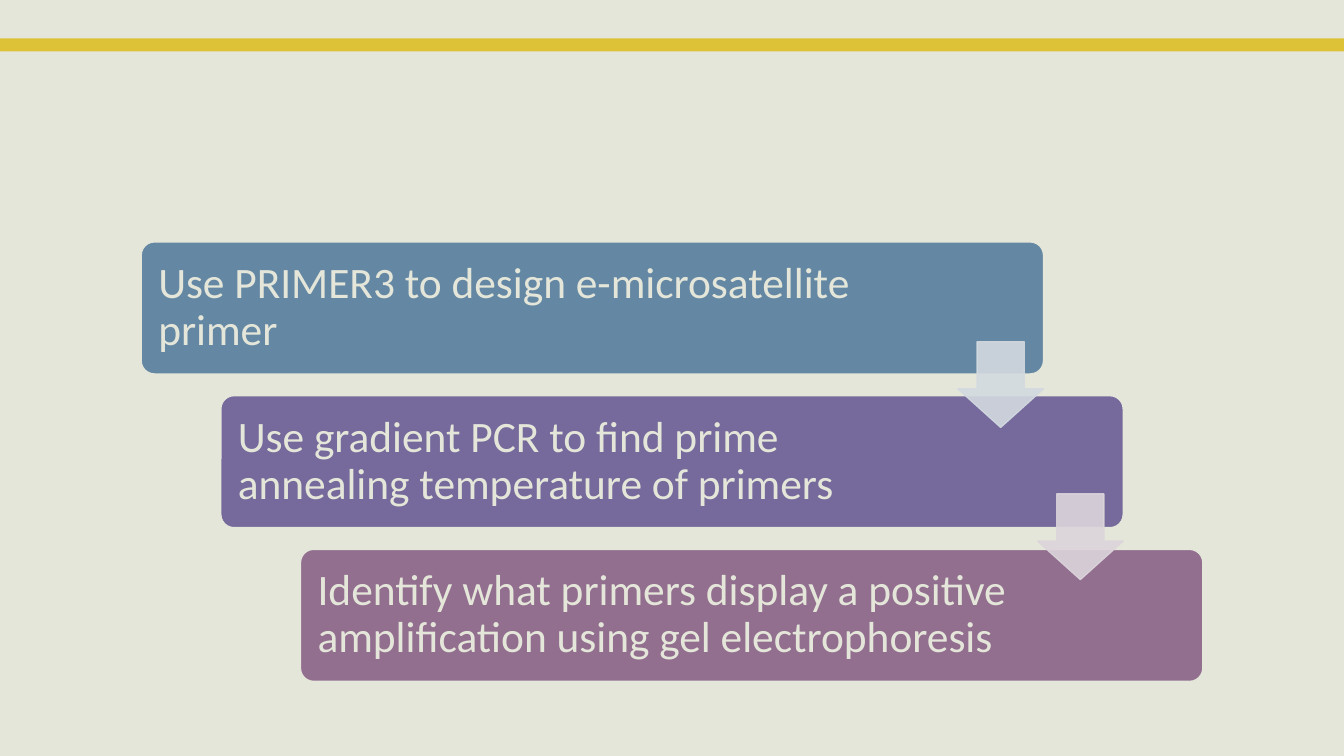
from lxml.etree import SubElement
from pptx import Presentation
from pptx.dml.color import RGBColor
from pptx.enum.shapes import MSO_SHAPE as Shape
from pptx.enum.text import MSO_ANCHOR as Anchor, PP_ALIGN as Align
from pptx.oxml.ns import qn
from pptx.util import Inches, Pt

CREAM = RGBColor(0xE5, 0xE6, 0xDA)
GOLD = RGBColor(0xDD, 0xC2, 0x37)
BLUE = RGBColor(0x64, 0x88, 0xA3)
PURPLE = RGBColor(0x76, 0x69, 0x9B)
MAUVE = RGBColor(0x92, 0x6E, 0x8F)
PALE_BLUE = RGBColor(0xD3, 0xDA, 0xE0)
PALE_MAUVE = RGBColor(0xDC, 0xD5, 0xDB)

STEPS = [
    ("Use PRIMER3 to design e-microsatellite primer", BLUE, 7.54),
    ("Use gradient PCR to find prime annealing temperature of primers", PURPLE, 7.24),
    ("Identify what primers display a positive amplification using gel electrophoresis", MAUVE, 7.24),
]
ARROWS = [PALE_BLUE, PALE_MAUVE]

WIDTH, HEIGHT = 13.33, 7.5
LEFT, TOP = 1.4, 2.4
STEP_X, STEP_Y = 0.79, 1.525
CARD_W, CARD_H = 8.95, 1.31
ARROW_LEFT, ARROW_TOP, ARROW_SIZE, ARROW_STEP_Y = 9.5, 3.39, 0.85, 1.51
INSET, PADDING = 0.04, 0.13
FONT = {"name": "Calibri", "size": Pt(31)}
PARAGRAPH = {"line_spacing": 0.9, "alignment": Align.LEFT}
FRAME = {"word_wrap": True, "vertical_anchor": Anchor.MIDDLE}
FRAME.update({f"margin_{side}": Inches(PADDING) for side in ("left", "top", "right", "bottom")})


def set_all(target, values):
    for name, value in values.items():
        setattr(target, name, value)


def add_shape(shapes, kind, box, fill, line=None, adjustments=(), alpha=None):
    sp = shapes.add_shape(kind, *map(Inches, box))
    sp.shadow.inherit = False
    for i, value in enumerate(adjustments):
        sp.adjustments[i] = value
    sp.fill.solid()
    sp.fill.fore_color.rgb = fill
    if line is None:
        sp.line.fill.background()
    else:
        sp.line.color.rgb = line
        sp.line.width = Pt(1)
    if alpha is not None:
        for color in sp._element.spPr.iter(qn("a:srgbClr")):
            SubElement(color, qn("a:alpha"), val=str(alpha * 1000))


def add_label(shapes, box, text):
    tf = shapes.add_textbox(*map(Inches, box)).text_frame
    set_all(tf, FRAME)
    p = tf.paragraphs[0]
    set_all(p, PARAGRAPH)
    r = p.add_run()
    r.text = text
    set_all(r.font, FONT)
    r.font.color.rgb = CREAM


def main():
    """Build the slide of primer steps as a descending staircase."""
    prs = Presentation()
    prs.slide_width, prs.slide_height = Inches(WIDTH), Inches(HEIGHT)
    s = prs.slides.add_slide(prs.slide_layouts[6])
    s.background.fill.solid()
    s.background.fill.fore_color.rgb = CREAM
    add_shape(s.shapes, Shape.RECTANGLE, (0, 0.38, WIDTH, 0.13), GOLD)

    for i, (text, color, text_w) in enumerate(STEPS):
        x, y = LEFT + i * STEP_X, TOP + i * STEP_Y
        add_shape(s.shapes, Shape.ROUNDED_RECTANGLE, (x, y, CARD_W, CARD_H), color, CREAM, [0.1])
        add_label(s.shapes, (x + INSET, y + INSET, text_w, CARD_H - 2 * INSET), text)

    for i, color in enumerate(ARROWS):
        box = (ARROW_LEFT + i * STEP_X, ARROW_TOP + i * ARROW_STEP_Y, ARROW_SIZE, ARROW_SIZE)
        add_shape(s.shapes, Shape.DOWN_ARROW, box, color, color, [0.55, 0.45], 90)

    prs.save("out.pptx")


if __name__ == "__main__":
    main()
